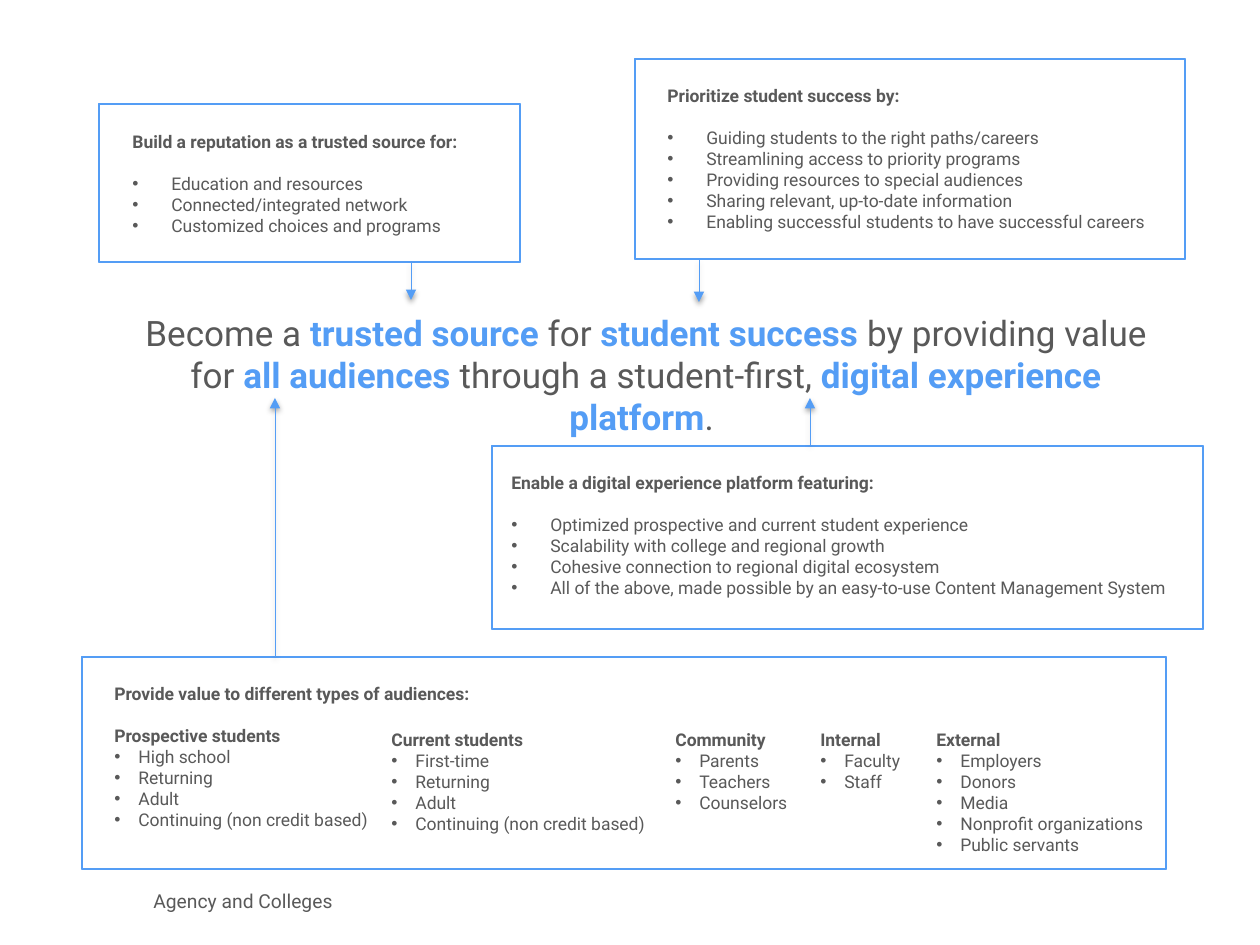
from lxml.etree import SubElement
from pptx import Presentation
from pptx.dml.color import RGBColor
from pptx.enum.shapes import MSO_CONNECTOR, MSO_SHAPE
from pptx.enum.text import MSO_ANCHOR, PP_ALIGN
from pptx.oxml.ns import qn
from pptx.util import Pt

PX = 914400 // 126
FONT = "Roboto"
COLORS = {"text": "595959", "accent": "549DF5", "shadow": "000000"}
WIDE_INDENT, NARROW_INDENT = 39, 24
LINE_GAP = Pt(11.7)

STATEMENT = [
    ("Become a ", False),
    ("trusted source ", True),
    ("for ", False),
    ("student success", True),
    (" by providing value for ", False),
    ("all audiences ", True),
    ("through a student-first, ", False),
    ("digital experience platform", True),
    (". ", False),
]
STATEMENT_BOX = (118, 305, 1056, 258)
FOOTER = "Agency and Colleges"
FOOTER_BOX = (141, 876, 617, 50)

GOALS = [
    {
        "frame": (99, 104, 421, 158),
        "box": (120, 125, 375, 118),
        "arrow": (411, 262, 300),
        "heading": "Build a reputation as a trusted source for:",
        "items": [
            "Education and resources",
            "Connected/integrated network",
            "Customized choices and programs",
        ],
    },
    {
        "frame": (635, 59, 550, 200),
        "box": (655, 79, 510, 161),
        "arrow": (699, 260, 302),
        "heading": "Prioritize student success by:",
        "items": [
            "Guiding students to the right paths/careers",
            "Streamlining access to priority programs",
            "Providing resources to special audiences",
            "Sharing relevant, up-to-date information",
            "Enabling successful students to have successful careers",
        ],
    },
    {
        "frame": (492, 446, 711, 183),
        "box": (499, 466, 703, 161),
        "arrow": (810, 445, 398),
        "heading": "Enable a digital experience platform featuring:",
        "items": [
            "Optimized prospective and current student experience",
            "Scalability with college and regional growth",
            "Cohesive connection to regional digital ecosystem",
            "All of the above, made possible by an easy-to-use Content Management System",
        ],
    },
    {
        "frame": (82, 657, 1084, 212),
        "box": (102, 677, 411, 161),
        "arrow": (275, 657, 398),
        "heading": "Provide value to different types of audiences:",
        "subheading": "Prospective students",
        "items": ["High school", "Returning", "Adult", "Continuing (non credit based)"],
    },
]

AUDIENCE_TOP = 723
AUDIENCES = [
    (379, 282, "Current students",
     ["First-time", "Returning", "Adult", "Continuing (non credit based)"]),
    (663, 139, "Community", ["Parents", "Teachers", "Counselors"]),
    (808, 107, "Internal", ["Faculty", "Staff"]),
    (924, 234, "External",
     ["Employers", "Donors", "Media", "Nonprofit organizations", "Public servants"]),
]


def color(name):
    return RGBColor.from_string(COLORS[name])


def scaled(box):
    return [value * PX for value in box]


def add_run(paragraph, text, size, bold=False, color_name="text"):
    run = paragraph.add_run()
    run.text = text
    run.font.name = FONT
    run.font.size = Pt(size)
    run.font.bold = bold
    run.font.color.rgb = color(color_name)


def add_text_frame(slide, box, wrap=True):
    text_frame = slide.shapes.add_textbox(*scaled(box)).text_frame
    text_frame.word_wrap = wrap
    return text_frame


def add_bullet(paragraph, indent):
    properties = paragraph._p.get_or_add_pPr()
    properties.set("marL", str(indent * PX))
    properties.set("indent", str(-indent * PX))
    SubElement(properties, qn("a:buFont"), typeface="Arial")
    SubElement(properties, qn("a:buChar"), char="•")


def add_list(slide, box, headings, items, indent, gap=False):
    text_frame = add_text_frame(slide, box, wrap=False)
    lines = [(text, True) for text in headings] + [(text, False) for text in items]
    for index, (text, is_heading) in enumerate(lines):
        paragraph = text_frame.add_paragraph() if index else text_frame.paragraphs[0]
        if not is_heading:
            add_bullet(paragraph, indent)
        if gap and index == 1:
            paragraph.space_before = LINE_GAP
        add_run(paragraph, text, 10, bold=is_heading)


def add_frame(slide, box):
    shape = slide.shapes.add_shape(MSO_SHAPE.FRAME, *scaled(box))
    shape.adjustments[0] = 0
    shape.shadow.inherit = False
    shape.fill.solid()
    shape.fill.fore_color.rgb = color("accent")
    shape.line.color.rgb = color("accent")
    shape.line.width = 0


def add_arrow(slide, x, start, end):
    connector = slide.shapes.add_connector(
        MSO_CONNECTOR.STRAIGHT, *scaled((x, start, x, end)))
    connector.line.color.rgb = color("accent")
    connector.line.width = Pt(0.25)
    SubElement(connector.line._ln, qn("a:tailEnd"), type="triangle")
    effects = SubElement(connector._element.spPr, qn("a:effectLst"))
    shadow = SubElement(effects, qn("a:outerShdw"), blurRad=str(Pt(3.1)),
                        dist=str(Pt(1.6)), dir="5400000", rotWithShape="0")
    shade = SubElement(shadow, qn("a:srgbClr"), val=COLORS["shadow"])
    SubElement(shade, qn("a:alpha"), val="38000")


def main():
    presentation = Presentation()
    presentation.slide_width, presentation.slide_height = scaled((1260, 945))
    slide = presentation.slides.add_slide(presentation.slide_layouts[6])

    statement = add_text_frame(slide, STATEMENT_BOX).paragraphs[0]
    statement.alignment = PP_ALIGN.CENTER
    for text, strong in STATEMENT:
        add_run(statement, text, 20, strong, "accent" if strong else "text")

    footer = add_text_frame(slide, FOOTER_BOX)
    footer.vertical_anchor = MSO_ANCHOR.MIDDLE
    add_run(footer.paragraphs[0], FOOTER, 11)

    for goal in GOALS:
        headings = [goal["heading"]]
        indent = WIDE_INDENT
        if "subheading" in goal:
            headings.append(goal["subheading"])
            indent = NARROW_INDENT
        add_frame(slide, goal["frame"])
        add_list(slide, goal["box"], headings, goal["items"], indent, gap=True)
        add_arrow(slide, *goal["arrow"])

    for left, width, heading, items in AUDIENCES:
        height = 34 + 21 * len(items)
        add_list(slide, (left, AUDIENCE_TOP, width, height), [heading], items, NARROW_INDENT)

    presentation.save("out.pptx")


if __name__ == "__main__":
    main()
